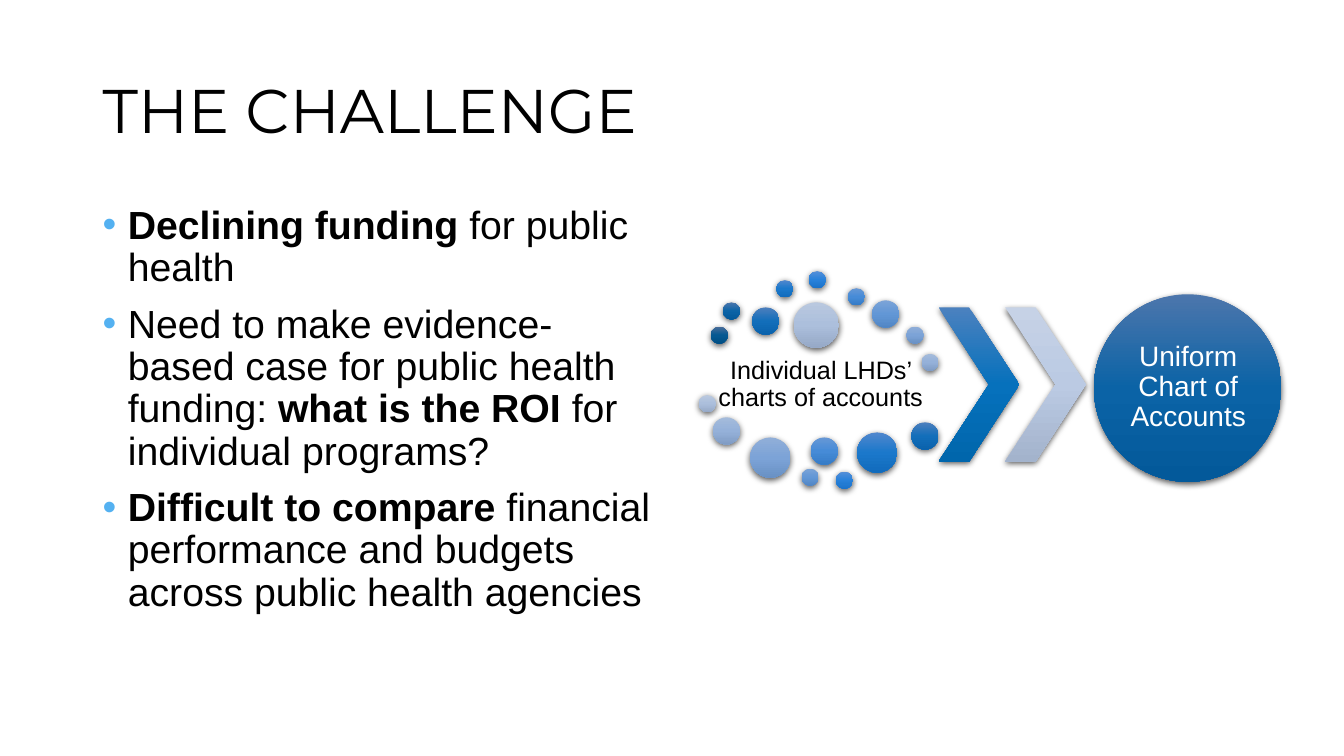
from lxml import etree
from pptx import Presentation, util as u
from pptx.dml.color import RGBColor
from pptx.enum import shapes, text
from pptx.oxml.ns import nsdecls

PX = 9144
HUE = {
    "ink": "000000", "white": "FFFFFF", "dot": "54B1F1",
    "navy": "4B6D9A 055891 004F85",
    "deep": "4C76AC 0B63A6 03599A",
    "blue": "4D7FBD 126EBA 0A62AC",
    "royal": "5087CD 1B78CB 116BBC",
    "azure": "568FD8 2881DA 1B73CA",
    "sky": "6798D6 468BD7 367CC7",
    "soft": "7BA3D7 6297D6 5186C4",
    "mist": "90AED8 7CA3D7 6991C4",
    "haze": "A4BBDB 95B1D9 809CC4",
    "pale": "B9C8DF ACBFDC 96A9C7",
    "arrow": "4B81BF 0671BC 0066AC",
    "faint": "C6D2E6 BBCAE3 A3B3CC",
}
FADE = ["navy", "deep", "blue", "royal", "azure",
        "sky", "soft", "mist", "haze", "pale"]

deck = Presentation()
deck.slide_width, deck.slide_height = 1333 * PX, 750 * PX
slide = deck.slides.add_slide(deck.slide_layouts[6])


def write(home, area, paras, size, color, font="Arial", inset=(10, 5), align=None):
    frame = home.add_textbox(*[n * PX for n in area]).text_frame
    frame.word_wrap = True
    frame.vertical_anchor = text.MSO_ANCHOR.MIDDLE
    frame.margin_left = frame.margin_right = inset[0] * PX
    frame.margin_top = frame.margin_bottom = inset[1] * PX
    for i, parts in enumerate(paras):
        para = frame.paragraphs[0] if i == 0 else frame.add_paragraph()
        para.line_spacing = 0.9
        para.alignment = align
        for words, bold in parts:
            run = para.add_run()
            run.text = words
            run.font.name, run.font.size = font, u.Pt(size)
            run.font.bold = bold
            run.font.color.rgb = RGBColor.from_string(HUE[color])
    return frame


def paint(home, kind, area, tone):
    item = home.add_shape(kind, *[n * PX for n in area])
    item.line.fill.background()
    stops = "".join(
        f'<a:gs pos="{i * 50000}"><a:srgbClr val="{c}"/></a:gs>'
        for i, c in enumerate(HUE[tone].split()))
    fill = etree.fromstring(
        f'<a:gradFill {nsdecls("a")} rotWithShape="1"><a:gsLst>{stops}</a:gsLst>'
        '<a:lin ang="5400000" scaled="0"/></a:gradFill>')
    glow = etree.fromstring(
        f'<a:effectLst {nsdecls("a")}><a:outerShdw blurRad="57150" dist="19050" '
        'dir="5400000" algn="ctr" rotWithShape="0">'
        f'<a:srgbClr val="{HUE["ink"]}"><a:alpha val="63000"/></a:srgbClr>'
        '</a:outerShdw></a:effectLst>')
    line = item.line._get_or_add_ln()
    line.addprevious(fill)
    line.addnext(glow)
    return item


write(slide.shapes, (92, 40, 1150, 145), [[("THE CHALLENGE", False)]],
      44, "ink", "Montserrat")

points = [
    [("Declining funding ", True), ("for public health", False)],
    [("Need to make evidence-based case for public health funding: ", False),
     ("what is the ROI ", True), ("for individual programs?", False)],
    [("Difficult to compare ", True),
     ("financial performance and budgets across public health agencies", False)],
]
body = write(slide.shapes, (92, 200, 567, 450), points, 28, "ink")
body.margin_bottom = 41 * PX
for i, para in enumerate(body.paragraphs):
    props = para._p.get_or_add_pPr()
    props.set("marL", str(25 * PX))
    props.set("indent", str(-25 * PX))
    for mark in (f'<a:buClr {nsdecls("a")}><a:srgbClr val="{HUE["dot"]}"/></a:buClr>',
                 f'<a:buFont {nsdecls("a")} typeface="Arial"/>',
                 f'<a:buChar {nsdecls("a")} char="•"/>'):
        props.append(etree.fromstring(mark))
    para.space_before = u.Pt(10 if i else 0)
    para.line_spacing = 0.9

flow = slide.shapes.add_group_shape().shapes
mid = text.PP_ALIGN.CENTER
oval = shapes.MSO_SHAPE.OVAL

write(flow, (705, 346, 218, 72), [[("Individual LHDs’ charts of accounts", False)]],
      18, "ink", inset=(3, 3), align=mid)

upper = [(705, 324, 17), (717, 300, 17), (746, 305, 27), (770, 278, 17),
         (802, 269, 17), (841, 286, 17), (865, 298, 27), (899, 324, 17),
         (914, 351, 17), (787, 300, 45)]
lower = [(693, 392, 17), (707, 414, 27), (744, 434, 40), (795, 465, 17),
         (804, 434, 27), (829, 468, 17), (850, 429, 40), (904, 419, 27)]
for (x, y, d), tone in zip(upper + lower, FADE + FADE[::-1]):
    paint(flow, oval, (x, y, d, d), tone)

for i, tone in enumerate(["arrow", "faint"]):
    wedge = paint(flow, shapes.MSO_SHAPE.CHEVRON, (931 + 66 * i, 305, 80, 153), tone)
    wedge.adjustments[0] = 0.623

paint(flow, oval, (1085, 292, 186, 186), "deep")
write(flow, (1113, 319, 131, 131), [[("Uniform Chart of Accounts", False)]],
      20, "white", inset=(0, 0), align=mid)

deck.save("out.pptx")
